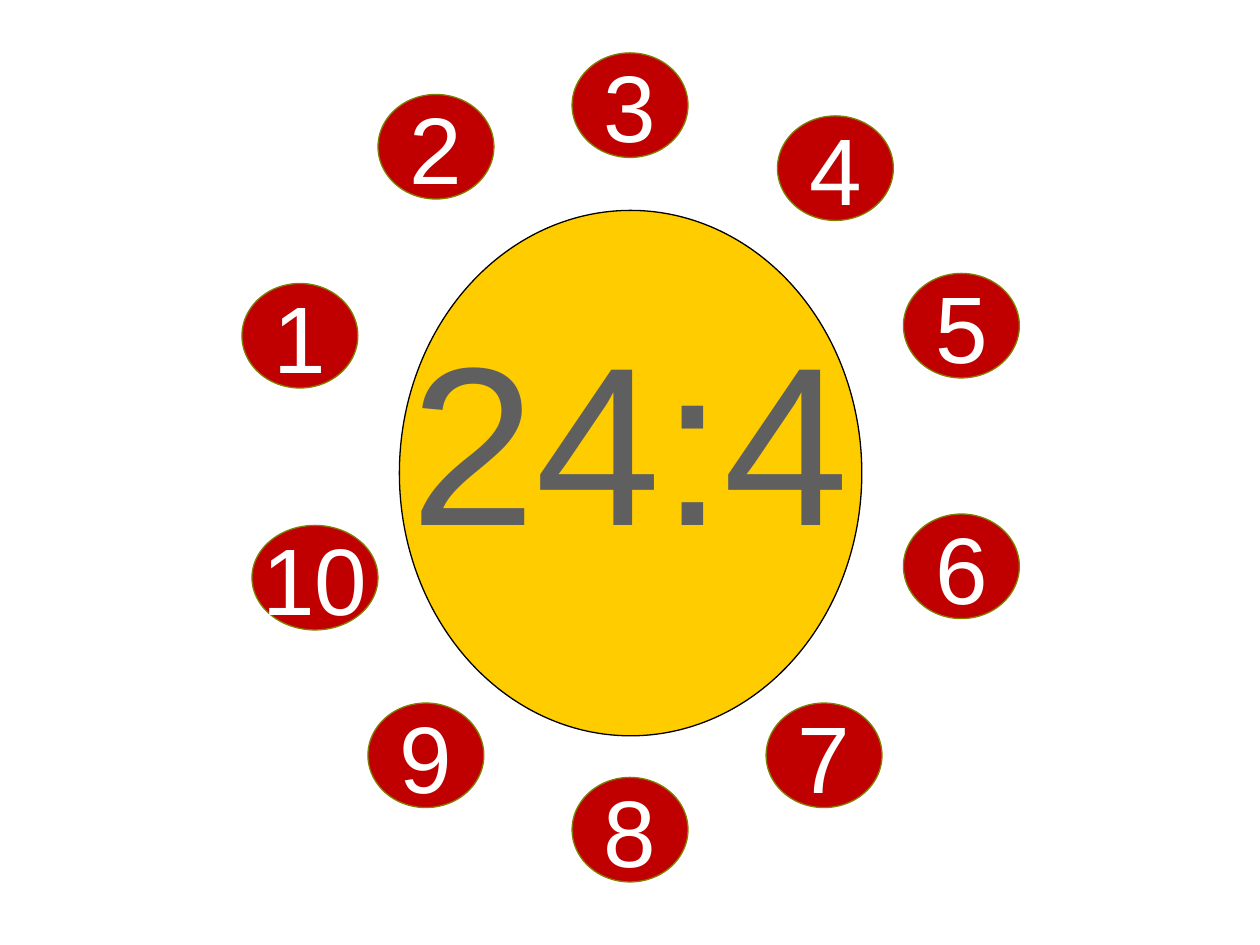
from pptx import Presentation
from pptx.dml.color import RGBColor
from pptx.enum.shapes import MSO_SHAPE
from pptx.enum.text import MSO_ANCHOR, PP_ALIGN
from pptx.util import Inches, Pt

THEME = {
    "font": "Arial",
    "sun": RGBColor.from_string("FFCC00"),
    "sun_line": RGBColor.from_string("000000"),
    "task": RGBColor.from_string("5F5F5F"),
    "ball": RGBColor.from_string("C00000"),
    "ball_line": RGBColor.from_string("808000"),
    "number": RGBColor.from_string("FFFFFF"),
    "task_size": Pt(129),
    "number_size": Pt(54),
    "line_width": Pt(0.75),
}

# Content: the task in the middle and the left, top of each numbered ball
TASK = "24:4"
BALLS = {
    "6": (7.17, 4.08),
    "2": (3, 0.75),
    "3": (4.54, 0.42),
    "4": (6.17, 0.92),
    "5": (7.17, 2.17),
    "1": (1.92, 2.25),
    "7": (6.08, 5.58),
    "8": (4.54, 6.17),
    "9": (2.92, 5.58),
    "10": (2, 4.17),
}
BALL_HEIGHT = 0.83
BALL_WIDTHS = {1: 0.92, 2: 1}  # by number of digits


def add_round(slide, kind, box, fill, line):
    sp = slide.shapes.add_shape(kind, *map(Inches, box))
    sp.shadow.inherit = False
    sp.fill.solid()
    sp.fill.fore_color.rgb = fill
    sp.line.color.rgb = line
    sp.line.width = THEME["line_width"]
    return sp


def write(sp, text, size, color):
    tf = sp.text_frame
    tf.word_wrap = False
    tf.vertical_anchor = MSO_ANCHOR.MIDDLE
    p = tf.paragraphs[0]
    p.text = text
    p.alignment = PP_ALIGN.CENTER
    p.font.name = THEME["font"]
    p.font.size = size
    p.font.color.rgb = color


prs = Presentation()
prs.slide_width, prs.slide_height = Inches(10), Inches(7.5)
slide = prs.slides.add_slide(prs.slide_layouts[6])

# Yellow centre with the task
add_round(slide, MSO_SHAPE.OVAL, (3.17, 1.67, 3.67, 4.17),
          THEME["sun"], THEME["sun_line"])
task = slide.shapes.add_textbox(*map(Inches, (2.5, 1.58, 5, 3.75)))
write(task, TASK, THEME["task_size"], THEME["task"])

# Numbered balls around it
for number, (left, top) in BALLS.items():
    box = (left, top, BALL_WIDTHS[len(number)], BALL_HEIGHT)
    ball = add_round(slide, MSO_SHAPE.FLOWCHART_CONNECTOR, box,
                     THEME["ball"], THEME["ball_line"])
    write(ball, number, THEME["number_size"], THEME["number"])

prs.save("out.pptx")
